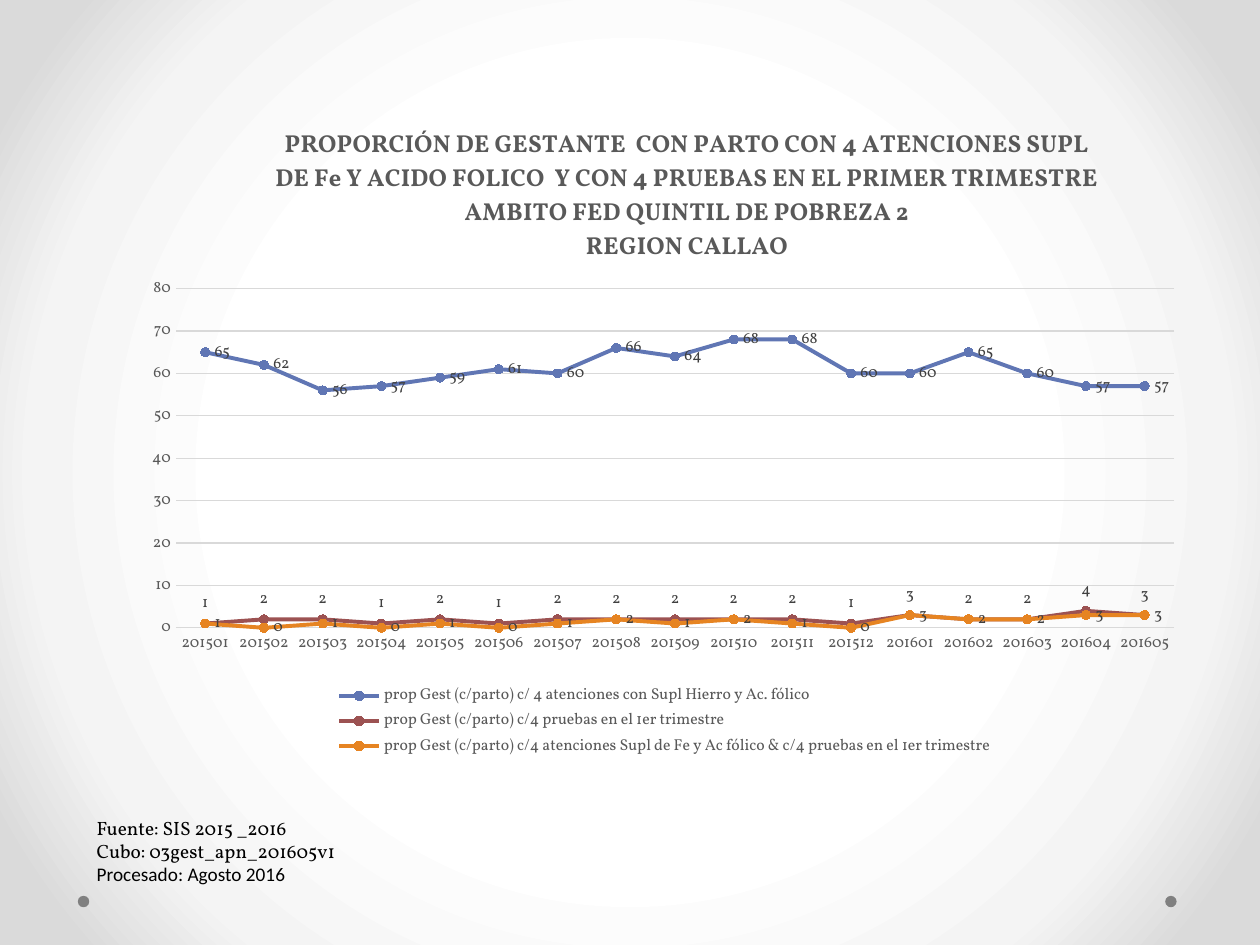
import pptx
import pptx.util
import pptx.dml.color
import pptx.chart.data
import pptx.enum.chart
import pptx.enum.shapes
import pptx.oxml
import pptx.oxml.ns

Cm, Pt = pptx.util.Cm, pptx.util.Pt
XL = pptx.enum.chart
FONT = "Vollkorn"
TITLE = (
    "PROPORCIÓN DE GESTANTE  CON PARTO CON 4 ATENCIONES SUPL DE Fe Y ACIDO FOLICO  "
    "Y CON 4 PRUEBAS EN EL PRIMER TRIMESTRE AMBITO FED QUINTIL DE POBREZA 2\n"
    "REGION CALLAO"
)
MONTHS = [f"2015{m:02d}" for m in range(1, 13)] + [f"2016{m:02d}" for m in range(1, 6)]
SERIES = [
    ("prop Gest (c/parto) c/ 4 atenciones con Supl Hierro y Ac. fólico", "6076B4",
     XL.XL_LABEL_POSITION.RIGHT,
     [65, 62, 56, 57, 59, 61, 60, 66, 64, 68, 68, 60, 60, 65, 60, 57, 57]),
    ("prop Gest (c/parto) c/4 pruebas en el 1er trimestre", "9C5252",
     XL.XL_LABEL_POSITION.ABOVE,
     [1, 2, 2, 1, 2, 1, 2, 2, 2, 2, 2, 1, 3, 2, 2, 4, 3]),
    ("prop Gest (c/parto) c/4 atenciones Supl de Fe y Ac fólico & c/4 pruebas en el 1er trimestre",
     "E68422", XL.XL_LABEL_POSITION.RIGHT,
     [1, 0, 1, 0, 1, 0, 1, 2, 1, 2, 1, 0, 3, 2, 2, 3, 3]),
]
SOURCE = [
    ("Fuente: SIS 2015 _2016", FONT),
    ("Cubo: 03gest_apn_201605v1", FONT),
    ("Procesado: Agosto 2016", "Calibri"),
]


def rgb(value):
    """Turn a hex string into a colour."""
    return pptx.dml.color.RGBColor.from_string(value)


def set_font(font, size, color, name=FONT, bold=False):
    """Set the look of one font."""
    font.size, font.name, font.bold = Pt(size), name, bold
    font.color.rgb = rgb(color)


def set_solid(fill, color):
    """Fill with one colour."""
    fill.solid()
    fill.fore_color.rgb = rgb(color)


def set_line(line, color, width):
    """Set the colour and width of a line."""
    set_solid(line.fill, color)
    line.width = Pt(width)


def set_layout(el, index, x, y, w=None, h=None, inner=False):
    """Place a chart part at fractions of the chart area."""
    for old in el.findall(pptx.oxml.ns.qn("c:layout")):
        el.remove(old)
    parts = [("xMode", "edge"), ("yMode", "edge"), ("x", x), ("y", y), ("w", w), ("h", h)]
    if inner:
        parts.insert(0, ("layoutTarget", "inner"))
    body = "".join(f'<c:{tag} val="{val}"/>' for tag, val in parts if val is not None)
    el.insert(index, pptx.oxml.parse_xml(
        f'<c:layout {pptx.oxml.ns.nsdecls("c")}><c:manualLayout>{body}</c:manualLayout></c:layout>'))


def add_background(slide):
    """Give the slide a round gradient from white to grey."""
    stops = "".join(f'<a:gs pos="{pos}000"><a:srgbClr val="{color}"/></a:gs>'
                    for pos, color in [(50, "FFFFFF"), (76, "F4F4F4"), (92, "DADADA")])
    bg = pptx.oxml.parse_xml(
        f'<p:bg {pptx.oxml.ns.nsdecls("p", "a")}><p:bgPr><a:gradFill rotWithShape="1">'
        f'<a:gsLst>{stops}</a:gsLst><a:path path="circle">'
        '<a:fillToRect l="50000" t="50000" r="50000" b="50000"/></a:path>'
        '</a:gradFill><a:effectLst/></p:bgPr></p:bg>')
    slide.element.cSld.insert(0, bg)


def add_dots(slide, left, top, width, size):
    """Put a grey dot at each end of the given strip."""
    for x in (left + width - size, left):
        sp = slide.shapes.add_shape(pptx.enum.shapes.MSO_SHAPE.OVAL, x, top, size, size)
        sp.shadow.inherit = False
        set_solid(sp.fill, "808080")
        sp.line.fill.background()


def add_source(slide, left, top, width, height):
    """Write the source lines."""
    tf = slide.shapes.add_textbox(left, top, width, height).text_frame
    tf.word_wrap = True
    tf.text = "\n".join(text for text, _ in SOURCE)
    for p, (_, name) in zip(tf.paragraphs, SOURCE):
        set_font(p.font, 11, "000000", name)


def format_axes(chart):
    """Style both axes and the grid."""
    cat, val = chart.category_axis, chart.value_axis
    for axis in (cat, val):
        axis.major_tick_mark = axis.minor_tick_mark = XL.XL_TICK_MARK.NONE
        set_font(axis.tick_labels.font, 9, "595959")
    set_line(cat.format.line, "D9D9D9", 0.75)
    val.format.line.fill.background()
    val.minimum_scale, val.maximum_scale, val.major_unit = 0, 80, 10
    val.tick_labels.number_format = "0"
    val.tick_labels.number_format_is_linked = False
    set_line(val.major_gridlines.format.line, "D9D9D9", 0.75)


def format_series(ser, color, position):
    """Style one line with its markers and labels."""
    ser.smooth = False
    set_line(ser.format.line, color, 2.25)
    ser.marker.style, ser.marker.size = XL.XL_MARKER_STYLE.CIRCLE, 5
    set_solid(ser.marker.format.fill, color)
    set_line(ser.marker.format.line, color, 0.75)
    labels = ser.data_labels
    labels.show_value = True
    labels.number_format, labels.number_format_is_linked = "0", False
    labels.position = position
    set_font(labels.font, 9, "404040")


def add_chart(slide, left, top, width, height):
    """Draw the line chart with its title and legend."""
    data = pptx.chart.data.CategoryChartData(number_format="0")
    data.categories = MONTHS
    for name, _, _, values in SERIES:
        data.add_series(name, values)
    chart = slide.shapes.add_chart(
        XL.XL_CHART_TYPE.LINE_MARKERS, left, top, width, height, data).chart
    set_font(chart.font, 10, "000000")
    chart.plots[0].vary_by_categories = False
    format_axes(chart)
    for ser, (_, color, position, _) in zip(chart.plots[0].series, SERIES):
        format_series(ser, color, position)

    title = chart.chart_title
    title.text_frame.text = TITLE
    title.include_in_layout = False if hasattr(title, "include_in_layout") else None
    for p in title.text_frame.paragraphs:
        for r in p.runs:
            set_font(r.font, 14, "595959", bold=True)
    chart.has_legend = True
    legend = chart.legend
    legend.position = XL.XL_LEGEND_POSITION.BOTTOM
    legend.include_in_layout = False
    set_font(legend.font, 9, "595959")

    set_layout(title._element, 1, 0.13, 0.04)
    set_layout(legend._element, 1, 0.19, 0.88, 0.62, 0.12)
    set_layout(chart._chartSpace.chart.plotArea, 0, 0.04, 0.29, 0.94, 0.51, inner=True)


def main():
    """Build the slide and save it."""
    prs = pptx.Presentation()
    prs.slide_width, prs.slide_height = Cm(25.4), Cm(19.05)
    slide = prs.slides.add_slide(prs.slide_layouts[6])
    add_background(slide)
    add_dots(slide, Cm(1.57), Cm(18.06), Cm(22.15), Cm(0.23))
    add_source(slide, Cm(1.7), Cm(16.33), Cm(8.2), Cm(2.13))
    add_chart(slide, Cm(2.69), Cm(1.93), Cm(21.41), Cm(13.41))
    prs.save("out.pptx")


if __name__ == "__main__":
    main()
